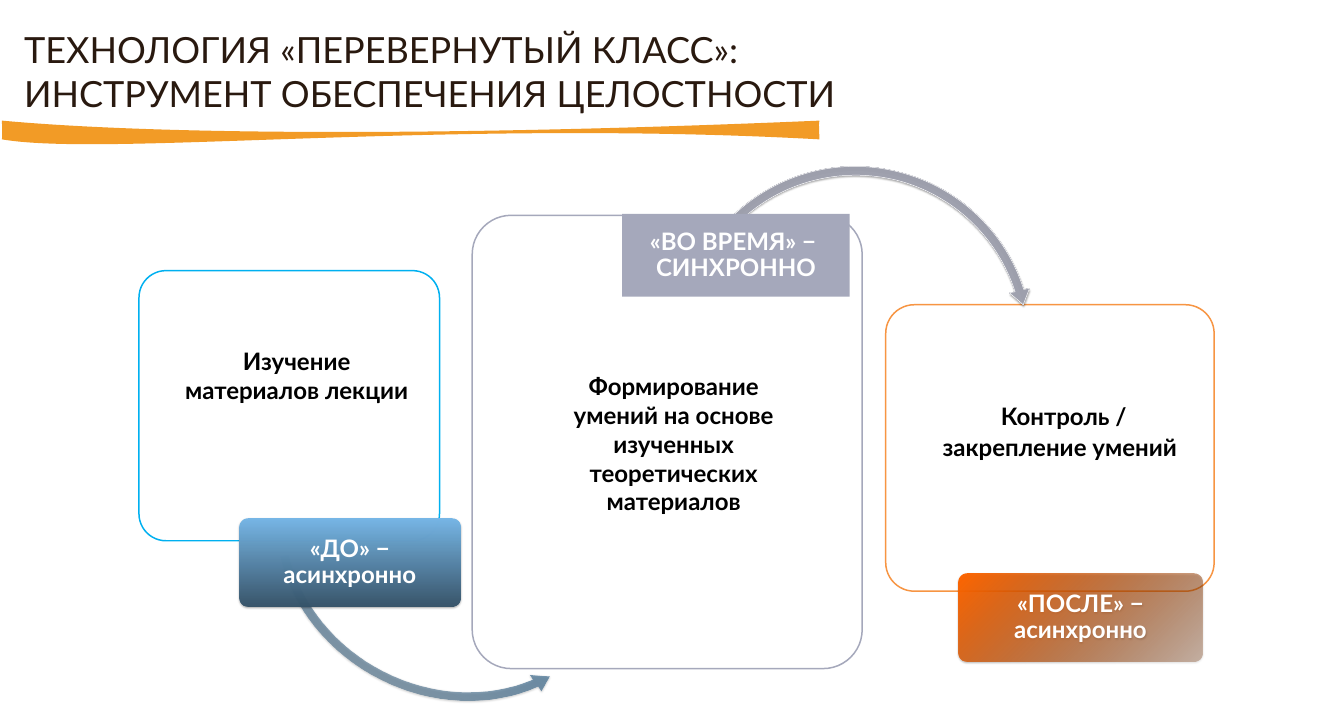
from dataclasses import dataclass
from math import cos, radians, sin

from lxml import etree
from pptx import Presentation
from pptx.dml.color import RGBColor
from pptx.enum.shapes import MSO_SHAPE
from pptx.enum.text import MSO_ANCHOR, PP_ALIGN
from pptx.oxml.ns import qn
from pptx.util import Inches, Pt

RECT, ROUND = MSO_SHAPE.RECTANGLE, MSO_SHAPE.ROUNDED_RECTANGLE
TOP, MIDDLE, BOTTOM = MSO_ANCHOR.TOP, MSO_ANCHOR.MIDDLE, MSO_ANCHOR.BOTTOM
LEFT, CENTER = PP_ALIGN.LEFT, PP_ALIGN.CENTER
FONT = "Lato"

Box = tuple[float, float, float, float]
Outline = list[tuple[float, ...]]


@dataclass
class Gradient:
    start: str
    end: str
    end_alpha: int = 100
    angle: int = 90
    radial: bool = False


@dataclass
class Card:
    box: Box
    line: str
    text: str
    text_box: Box
    lead_size: float | None = None


@dataclass
class Label:
    box: Box
    kind: int
    fill: str | Gradient
    text: str


@dataclass
class Curve:
    box: Box
    outline: Outline
    fill: str | Gradient
    line: str | None = None
    rotation: float = 0


CARDS = [
    Card((2.89, 5.63, 6.25, 5.62), "00B0F0",
         "Изучение материалов лекции", (3.47, 7.09, 5.4, 1.45)),
    Card((9.82, 4.48, 8.11, 9.43), "A5A8BB",
         "Формирование умений на основе изученных теоретических материалов",
         (11.31, 7.61, 5.4, 3.27)),
    Card((18.42, 6.34, 6.83, 5.96), "F79543",
         "Контроль / закрепление умений", (19.34, 8.07, 5.4, 2.26), 48),
]
ARROWS = [
    Curve((5.53, 7.88, 7.63, 6.72),
          [(5.83, 11.58), (6.01, 11.56),
           (6.25, 12.56, 6.98, 13.46, 7.97, 13.96),
           (8.97, 14.47, 10.12, 14.53, 11.06, 14.13),
           (10.99, 14.03), (11.42, 14.06), (11.24, 14.38), (11.17, 14.28),
           (10.17, 14.72, 8.96, 14.67, 7.9, 14.13),
           (6.84, 13.6, 6.07, 12.65, 5.83, 11.58)],
          Gradient("77B7E7", "365369", 44), rotation=27.6),
    Curve((13.99, 3.34, 7.6, 7.6),
          [(15.25, 4.48),
           (16.17, 3.6, 17.47, 3.26, 18.7, 3.58),
           (19.93, 3.89, 20.91, 4.82, 21.29, 6.02),
           (21.41, 6), (21.28, 6.34), (20.99, 6.09), (21.11, 6.07),
           (20.74, 4.92, 19.81, 4.05, 18.65, 3.75),
           (17.48, 3.46, 16.25, 3.78, 15.38, 4.61)],
          Gradient("CBCCD8", "888A98", radial=True), "FFFFFF"),
]
LABELS = [
    Label((4.98, 10.79, 4.59, 1.83), ROUND,
          Gradient("77B7E7", "365369", 97), "«ДО» − асинхронно"),
    Label((12.94, 4.45, 4.73, 1.72), RECT, "A5A8BB", "«ВО ВРЕМЯ» − \vСИНХРОННО"),
    Label((19.94, 11.93, 5.06, 1.83), ROUND,
          Gradient("FF6600", "742E00", 29, 45), "«ПОСЛЕ» − асинхронно"),
]
WAVE = Curve((0.04, 2.51, 16.99, 0.4),
             [(17.04, 2.51), (9.56, 2.83, 3.43, 2.82, 0.04, 2.51),
              (0.04, 2.56, 0.05, 2.8, 0.04, 2.9),
              (2.21, 3.27, 9.25, 2.47, 17.04, 2.9),
              (17.04, 2.76, 17.02, 2.6, 17.04, 2.51)], "F29B26")
TITLE = ["ТЕХНОЛОГИЯ «ПЕРЕВЕРНУТЫЙ КЛАСС»:", "ИНСТРУМЕНТ ОБЕСПЕЧЕНИЯ ЦЕЛОСТНОСТИ"]


def rgb(color: str) -> RGBColor:
    return RGBColor.from_string(color)


def set_gradient(sp, gradient: Gradient) -> None:
    sp.fill.gradient()
    sp.fill.gradient_angle = 360 - gradient.angle
    for stop, color, position in zip(sp.fill.gradient_stops,
                                     (gradient.start, gradient.end), (0, 1)):
        stop.color.rgb = rgb(color)
        stop.position = position
    grad = sp._element.spPr.find(qn("a:gradFill"))
    if gradient.end_alpha < 100:
        color = grad.findall(".//" + qn("a:srgbClr"))[-1]
        etree.SubElement(color, qn("a:alpha"), val=str(gradient.end_alpha * 1000))
    if gradient.radial:
        radial = etree.Element(qn("a:path"), path="circle")
        etree.SubElement(radial, qn("a:fillToRect"),
                         {side: "50000" for side in "ltrb"})
        grad.replace(grad.find(qn("a:lin")), radial)


def add_shadow(sp) -> None:
    effects = sp._element.spPr.find(qn("a:effectLst"))
    shadow = etree.SubElement(effects, qn("a:outerShdw"), blurRad=str(Pt(3.1)),
                              dist=str(Pt(1.8)), dir="5400000", rotWithShape="0")
    color = etree.SubElement(shadow, qn("a:srgbClr"), val="000000")
    etree.SubElement(color, qn("a:alpha"), val="35000")


def style(sp, fill: str | Gradient | None, line: str | None = None,
          width: float = 0.75) -> None:
    sp.shadow.inherit = False
    if fill is None:
        sp.fill.background()
    elif isinstance(fill, Gradient):
        set_gradient(sp, fill)
        add_shadow(sp)
    else:
        sp.fill.solid()
        sp.fill.fore_color.rgb = rgb(fill)
    if line is None:
        sp.line.fill.background()
    else:
        sp.line.color.rgb = rgb(line)
        sp.line.width = Pt(width)


def add_box(s, kind: int, box: Box):
    sp = s.shapes.add_shape(kind, *map(Inches, box))
    if kind == ROUND:
        sp.adjustments[0] = 0.1
    return sp


def add_curve(s, curve: Curve) -> None:
    left, top, width, height = curve.box
    cos_a, sin_a = cos(radians(curve.rotation)), sin(radians(curve.rotation))

    def local(x: float, y: float) -> tuple[int, int]:
        dx, dy = x - left - width / 2, y - top - height / 2
        return (Inches(width / 2 + dx * cos_a + dy * sin_a),
                Inches(height / 2 - dx * sin_a + dy * cos_a))

    parts = [[local(*part[i:i + 2]) for i in range(0, len(part), 2)]
             for part in curve.outline]
    builder = s.shapes.build_freeform(*parts[0][0])
    builder.add_line_segments([part[-1] for part in parts[1:]], close=True)
    sp = builder.convert_to_shape()
    sp.left, sp.top, sp.width, sp.height = map(Inches, curve.box)
    sp.rotation = curve.rotation
    route = sp._element.spPr.find(".//" + qn("a:path"))
    route.set("w", str(Inches(width)))
    route.set("h", str(Inches(height)))
    for step, part in zip(list(route), parts):
        if len(part) == 3:
            bezier = etree.Element(qn("a:cubicBezTo"))
            route.replace(step, bezier)
            step = bezier
        for point in list(step):
            step.remove(point)
        for x, y in part:
            etree.SubElement(step, qn("a:pt"), x=str(x), y=str(y))
    style(sp, curve.fill, curve.line)


def write(sp, lines: list[str], size: float, color: str, bold: bool, align: int,
          anchor: int, insets: Box, spacing: float = 1.0,
          lead_size: float | None = None) -> None:
    tf = sp.text_frame
    tf.word_wrap = True
    tf.vertical_anchor = anchor
    tf.margin_left, tf.margin_top, tf.margin_right, tf.margin_bottom = map(Inches, insets)
    for i, line in enumerate(lines):
        p = tf.add_paragraph() if i else tf.paragraphs[0]
        if lead_size:
            r = p.add_run()
            r.text, r.font.size = " ", Pt(lead_size)
            p.add_run().text = line
        else:
            p.text = line
        p.alignment = align
        p.line_spacing = spacing
        p.font.name, p.font.size, p.font.bold = FONT, Pt(size), bold
        p.font.color.rgb = rgb(color)


def main() -> None:
    prs = Presentation()
    prs.slide_width, prs.slide_height = Inches(27.95), Inches(15)
    s = prs.slides.add_slide(prs.slide_layouts[6])
    for card in CARDS:
        style(add_box(s, ROUND, card.box), None, card.line, 2.25)
    for arrow in ARROWS:
        add_curve(s, arrow)
    for label in LABELS:
        sp = add_box(s, label.kind, label.box)
        style(sp, label.fill)
        write(sp, [label.text], 36, "FFFFFF", True, CENTER, MIDDLE,
              (0.12, 0.1, 0.12, 0.1), 0.9)
    for card in CARDS:
        sp = s.shapes.add_textbox(*map(Inches, card.text_box))
        write(sp, [card.text], 36, "000000", True, CENTER, TOP,
              (0.24, 0.12, 0.24, 0.12), lead_size=card.lead_size)
    add_curve(s, WAVE)
    sp = s.shapes.add_textbox(Inches(-0.68), Inches(0.44), Inches(22.33), Inches(2.06))
    write(sp, TITLE, 54, "29190F", False, LEFT, BOTTOM, (1.18, 0.12, 0, 0.12))
    prs.save("out.pptx")


if __name__ == "__main__":
    main()
